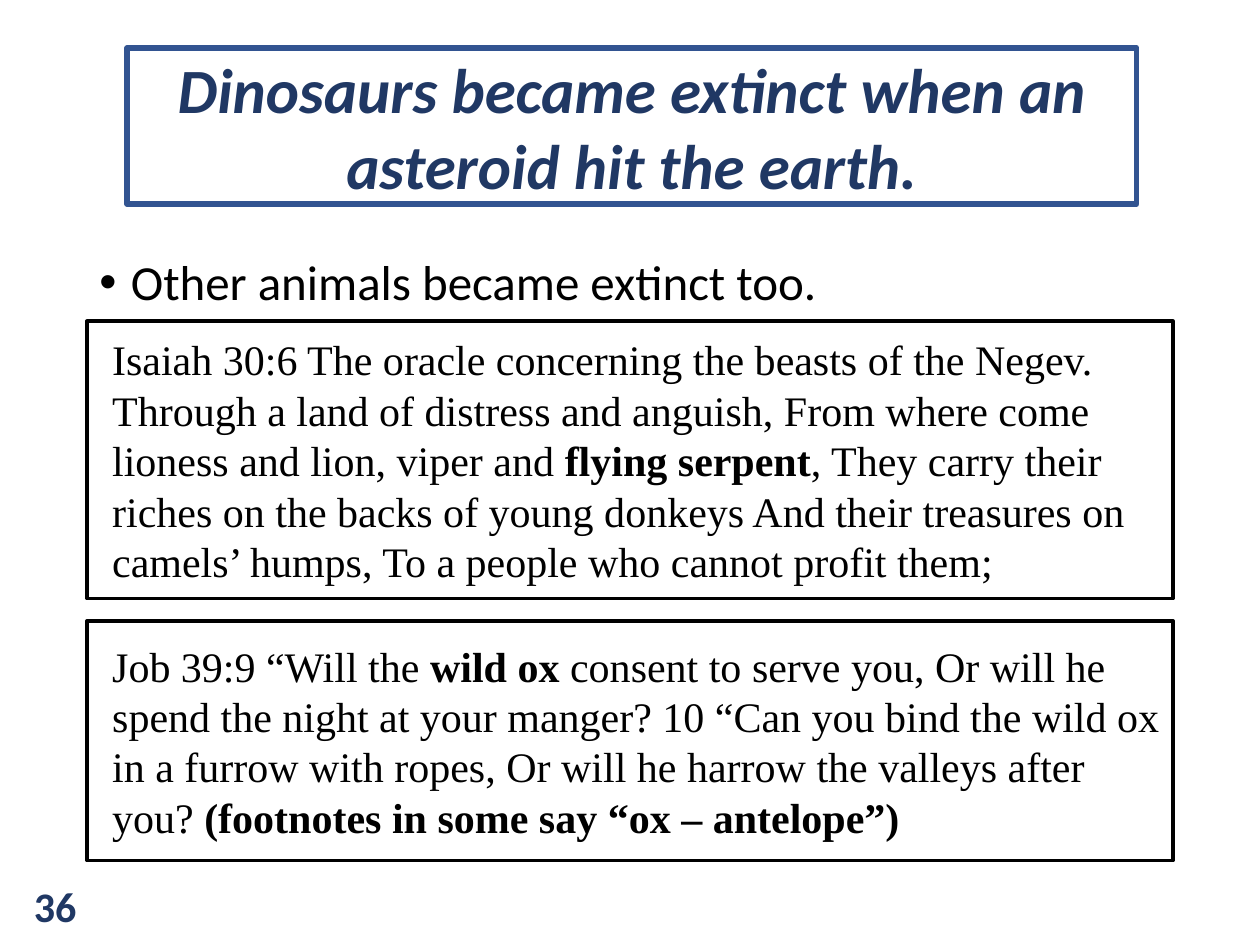
from lxml import etree
from pptx import Presentation
from pptx.dml.color import RGBColor
from pptx.enum import shapes, text
from pptx.oxml import ns
from pptx.util import Inches, Pt

NAVY = RGBColor(0x20, 0x38, 0x64)
BLUE = RGBColor(0x32, 0x54, 0x91)
BLACK = RGBColor(0, 0, 0)
WHITE = RGBColor(255, 255, 255)

ISAIAH = [
    ("Isaiah 30:6 The oracle concerning the beasts of the Negev. Through a land of "
     "distress and anguish, From where come lioness and lion, viper and ", False),
    ("flying serpent", True),
    (", They carry their riches on the backs of young donkeys And their treasures on "
     "camels’ humps, To a people who cannot profit them;", False),
]
JOB = [
    ("Job 39:9 “Will the ", False),
    ("wild ox ", True),
    ("consent to serve you, Or will he spend the night at your manger? 10 “Can you bind "
     "the wild ox in a furrow with ropes, Or will he harrow the valleys after you? ", False),
    ("(footnotes in some say “ox – antelope”)", True),
]


def inches(box):
    return [Inches(length) for length in box]


def style_font(paragraph, name, size, color, bold=None, italic=None):
    font = paragraph.font
    font.name, font.size = name, Pt(size)
    font.bold, font.italic = bold, italic
    font.color.rgb = color


def style_panel(panel, line_color, line_width):
    panel.fill.solid()
    panel.fill.fore_color.rgb = WHITE
    panel.line.color.rgb = line_color
    panel.line.width = Pt(line_width)


def place_title(slide, box, wording):
    title = slide.shapes.title
    title.left, title.top, title.width, title.height = inches(box)
    style_panel(title, BLUE, 3.25)
    frame = title.text_frame
    frame.text = wording
    frame.word_wrap = True
    frame.auto_size = text.MSO_AUTO_SIZE.NONE
    frame.vertical_anchor = text.MSO_ANCHOR.MIDDLE
    heading = frame.paragraphs[0]
    heading.alignment = text.PP_ALIGN.CENTER
    style_font(heading, "Calibri", 36, NAVY, bold=True, italic=True)


def add_point(slide, box, wording):
    frame = slide.shapes.add_textbox(*inches(box)).text_frame
    frame.word_wrap = True
    point = frame.paragraphs[0]
    point.text = wording
    point.line_spacing = 0.9
    properties = point._p.get_or_add_pPr()
    properties.set("marL", str(Inches(0.25)))
    properties.set("indent", str(Inches(-0.25)))
    etree.SubElement(properties, ns.qn("a:buFont"), typeface="Arial")
    etree.SubElement(properties, ns.qn("a:buChar"), char="•")
    style_font(point, "Calibri", 28, BLACK)


def add_passage(slide, box, phrases):
    panel = slide.shapes.add_shape(shapes.MSO_SHAPE.RECTANGLE, *inches(box))
    panel.shadow.inherit = False
    style_panel(panel, BLACK, 2)
    frame = panel.text_frame
    frame.word_wrap = True
    frame.margin_left = Inches(0.2)
    frame.vertical_anchor = text.MSO_ANCHOR.MIDDLE
    verse = frame.paragraphs[0]
    verse.alignment = text.PP_ALIGN.LEFT
    style_font(verse, "Times New Roman", 24, BLACK)
    for wording, bold in phrases:
        phrase = verse.add_run()
        phrase.text = wording
        if bold:
            phrase.font.bold = True


def add_page_number(slide, box, number):
    frame = slide.shapes.add_textbox(*inches(box)).text_frame
    frame.word_wrap = True
    page = frame.paragraphs[0]
    page.text = number
    style_font(page, "Calibri", 24, NAVY, bold=True)


def main():
    deck = Presentation()
    deck.slide_width, deck.slide_height = Inches(10), Inches(7.5)
    slide = deck.slides.add_slide(deck.slide_layouts[5])
    left, width = 0.69, 8.62
    place_title(slide, (1.01, 0.38, 8.01, 1.24),
                "Dinosaurs became extinct when an asteroid hit the earth.")
    add_point(slide, (left, 2, width, 0.55), "Other animals became extinct too.")
    add_passage(slide, (left, 2.55, width, 2.2), ISAIAH)
    add_passage(slide, (left, 4.93, width, 1.9), JOB)
    add_page_number(slide, (0.17, 6.94, 0.84, 0.5), "36")
    deck.save("out.pptx")


if __name__ == "__main__":
    main()
